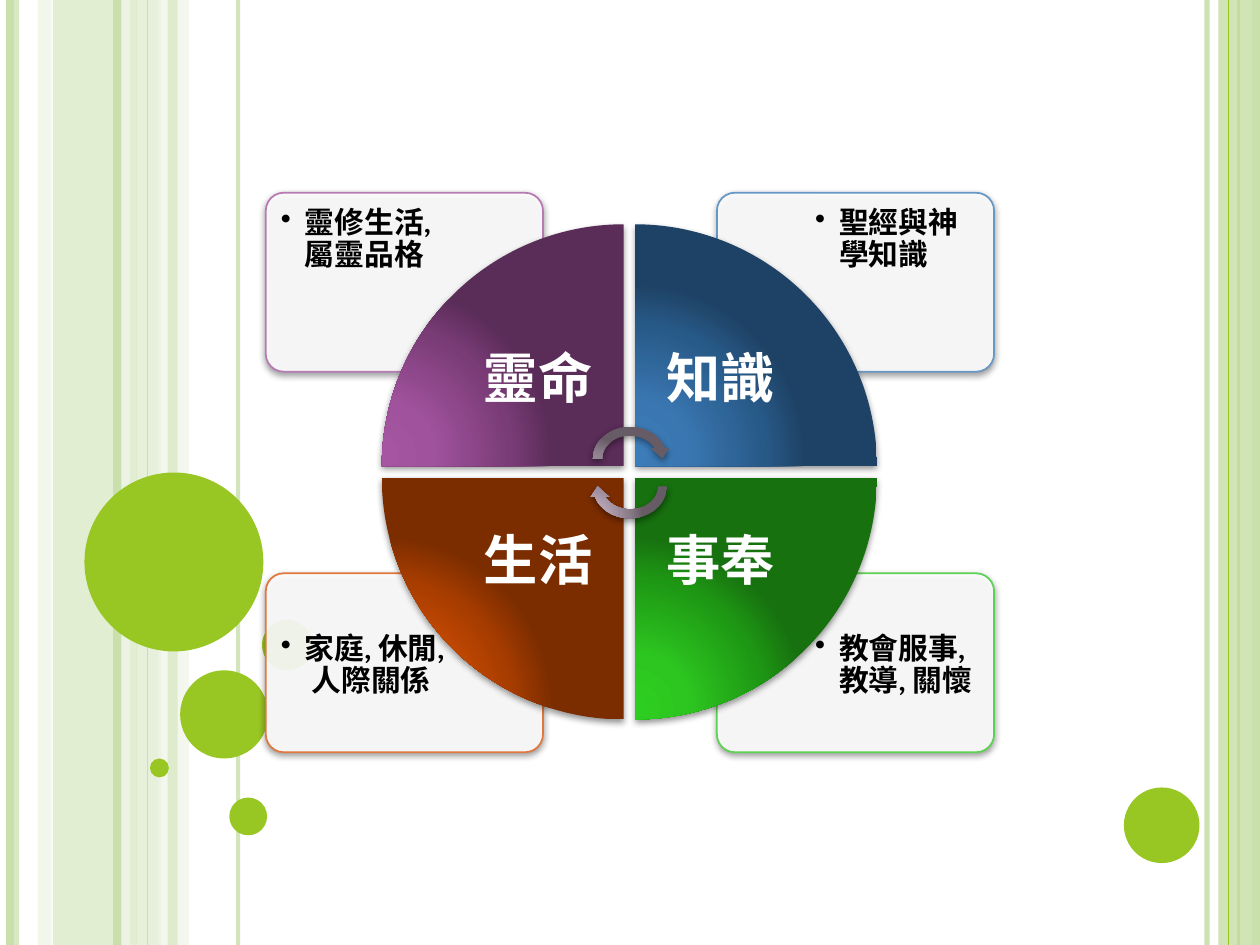
from lxml import etree
from pptx import Presentation
from pptx.dml.color import RGBColor
from pptx.enum.shapes import MSO_CONNECTOR, MSO_SHAPE
from pptx.enum.text import MSO_ANCHOR, PP_ALIGN
from pptx.oxml import parse_xml
from pptx.oxml.ns import nsdecls, qn
from pptx.util import Inches, Pt

FONT = "Cambria"
WHITE = RGBColor(0xFF, 0xFF, 0xFF)
BLACK = RGBColor(0, 0, 0)
GREEN = RGBColor(0x98, 0xC7, 0x23)
SAGE = RGBColor(0xCA, 0xE0, 0xAC)
PALE = RGBColor(0xDD, 0xEB, 0xCD)
MIST = RGBColor(0xEF, 0xF5, 0xE8)
PURPLE_LINE = RGBColor(0xB7, 0x7B, 0xB4)
BLUE_LINE = RGBColor(0x67, 0x97, 0xC4)
ORANGE_LINE = RGBColor(0xE0, 0x77, 0x3C)
GREEN_LINE = RGBColor(0x5C, 0xD1, 0x52)

STOPS = (0, 30, 75, 100)
PURPLES = ("A655A2", "A0529C", "7A3C77", "5A2C58")
BLUES = ("3C7CB9", "3A77B2", "285A88", "1E4265")
GREENS = ("2ECD21", "2DC620", "1E9814", "17710F")
ORANGES = ("E35505", "DB5205", "A83D00", "7C2D00")
GRAYS = ("C0ACBF", "B9A6B8", "8B7C8A", "675C66")

BACKDROP = [
    ("line", 9.58, 3, SAGE, 93),
    ("line", 0.08, 4.5, SAGE, 100),
    ("line", 9.83, 1.5, GREEN, 100),
    ("band", 9.67, 0.33, SAGE, 87),
    ("line", 9.75, 0.75, GREEN, 100),
    ("band", 0.42, 0.67, SAGE, 54),
    ("band", 0.3, 0.11, PALE, 36),
    ("band", 1.08, 0.2, PALE, 70),
    ("band", 1.25, 0.25, MIST, 71),
    ("line", 0.12, 4.5, SAGE, 73),
    ("line", 1, 4.5, MIST, 83),
    ("line", 0.93, 4.5, SAGE, 100),
    ("line", 1.89, 2.25, SAGE, 82),
    ("line", 1.17, 0.75, SAGE, 100),
    ("line", 9.97, 4.5, SAGE, 100),
    ("band", 1.33, 0.08, SAGE, 51),
]
CIRCLES = [
    (8.92, 6.25, 0.6), (0.67, 3.75, 1.42), (1.43, 5.32, 0.7),
    (1.19, 6.02, 0.15), (1.82, 6.33, 0.3), (2.08, 4.92, 0.4),
]
QUADRANTS = [
    (0, 0, 0, "靈命", "靈修生活, 屬靈品格", PURPLES, PURPLE_LINE),
    (1, 0, 90, "知識", "聖經與神學知識", BLUES, BLUE_LINE),
    (1, 1, 180, "事奉", "教會服事, 教導, 關懷", GREENS, GREEN_LINE),
    (0, 1, 270, "生活", "家庭, 休閒, 人際關係", ORANGES, ORANGE_LINE),
]


def set_opacity(container, percent):
    if percent < 100:
        color = next(container.iter(qn("a:srgbClr")))
        etree.SubElement(color, qn("a:alpha"), val=str(percent * 1000))


def add_shape(slide, kind, left, top, width, height, color=None, opacity=100):
    shape = slide.shapes.add_shape(
        kind, Inches(left), Inches(top), Inches(width), Inches(height))
    shape.shadow.inherit = False
    shape.line.fill.background()
    if color is None:
        shape.fill.background()
    else:
        shape.fill.solid()
        shape.fill.fore_color.rgb = color
        set_opacity(shape._element.spPr, opacity)
    return shape


def add_vertical_line(slide, x, width, color, opacity):
    connector = slide.shapes.add_connector(
        MSO_CONNECTOR.STRAIGHT, Inches(x), 0, Inches(x), Inches(7.5))
    connector.line.width = Pt(width)
    connector.line.color.rgb = color
    properties = connector._element.spPr
    set_opacity(properties, opacity)
    etree.SubElement(properties, qn("a:effectLst"))


def add_shadow(shape):
    effects = shape._element.spPr.find(qn("a:effectLst"))
    effects.append(parse_xml(
        f'<a:outerShdw {nsdecls("a")} blurRad="{Pt(4)}" dist="{Pt(1.6)}" '
        'dir="5400000" rotWithShape="0"><a:srgbClr val="000000">'
        '<a:alpha val="42000"/></a:srgbClr></a:outerShdw>'))


def add_glowing_shape(slide, kind, left, top, width, height, rotation, colors):
    shape = add_shape(slide, kind, left, top, width, height)
    shape.rotation = rotation
    stops = "".join(
        f'<a:gs pos="{stop * 1000}"><a:srgbClr val="{color}"/></a:gs>'
        for stop, color in zip(STOPS, colors))
    properties = shape._element.spPr
    properties.replace(properties.find(qn("a:noFill")), parse_xml(
        f'<a:gradFill {nsdecls("a")} rotWithShape="0"><a:gsLst>{stops}</a:gsLst>'
        '<a:path path="circle"><a:fillToRect l="5000" t="100000" r="120000" '
        'b="10000"/></a:path></a:gradFill>'))
    add_shadow(shape)


def add_text(slide, text, left, top, width, height, inset, size, color):
    box = slide.shapes.add_textbox(
        Inches(left), Inches(top), Inches(width), Inches(height))
    frame = box.text_frame
    frame.word_wrap = True
    frame.margin_left = frame.margin_right = Inches(inset)
    frame.margin_top = frame.margin_bottom = Inches(inset)
    paragraph = frame.paragraphs[0]
    paragraph.line_spacing = 0.9
    run = paragraph.add_run()
    run.text = text
    run.font.name = FONT
    run.font.size = Pt(size)
    run.font.bold = True
    run.font.color.rgb = color
    return frame


def add_card(slide, column, row, text, color):
    left, top = 2.11 + 3.58 * column, 1.53 + 3.02 * row
    card = add_shape(
        slide, MSO_SHAPE.ROUNDED_RECTANGLE, left, top, 2.2, 1.42, WHITE, 90)
    card.adjustments[0] = 0.1
    card.line.color.rgb = color
    card.line.width = Pt(1)
    add_shadow(card)
    frame = add_text(slide, text, left + (0.03, 0.69)[column],
                     top + (0.03, 0.39)[row], 1.47, 1, 0.09, 17, BLACK)
    properties = frame.paragraphs[0]._p.get_or_add_pPr()
    properties.set("marL", str(Inches(0.19)))
    properties.set("indent", str(Inches(-0.19)))
    etree.SubElement(properties, qn("a:buChar"), char="•")


def add_wedge(slide, column, row, rotation, text, colors):
    left, top = 3.03 + 2.01 * column, 1.78 + 2.01 * row
    add_glowing_shape(
        slide, MSO_SHAPE.PIE_WEDGE, left, top, 1.92, 1.92, rotation, colors)
    frame = add_text(slide, text, left + (0.56, 0)[column],
                     top + (0.56, 0)[row], 1.36, 1.36, 0.24, 31, WHITE)
    frame.vertical_anchor = MSO_ANCHOR.MIDDLE
    frame.paragraphs[0].alignment = PP_ALIGN.CENTER


def add_backdrop(slide):
    for kind, left, width, color, opacity in BACKDROP:
        if kind == "line":
            add_vertical_line(slide, left, width, color, opacity)
        else:
            add_shape(slide, MSO_SHAPE.RECTANGLE,
                      left, 0, width, 7.5, color, opacity)
    for left, top, diameter in CIRCLES:
        add_shape(slide, MSO_SHAPE.OVAL, left, top, diameter, diameter, GREEN)


def main():
    presentation = Presentation()
    presentation.slide_width = Inches(10)
    presentation.slide_height = Inches(7.5)
    slide = presentation.slides.add_slide(presentation.slide_layouts[6])
    add_backdrop(slide)
    for column, row, rotation, title, detail, colors, outline in QUADRANTS:
        add_card(slide, column, row, detail, outline)
    for column, row, rotation, title, detail, colors, outline in QUADRANTS:
        add_wedge(slide, column, row, rotation, title, colors)
    for top, rotation in ((3.35, 0), (3.57, 180)):
        add_glowing_shape(slide, MSO_SHAPE.CIRCULAR_ARROW,
                          4.67, top, 0.66, 0.58, rotation, GRAYS)
    presentation.save("out.pptx")


if __name__ == "__main__":
    main()
